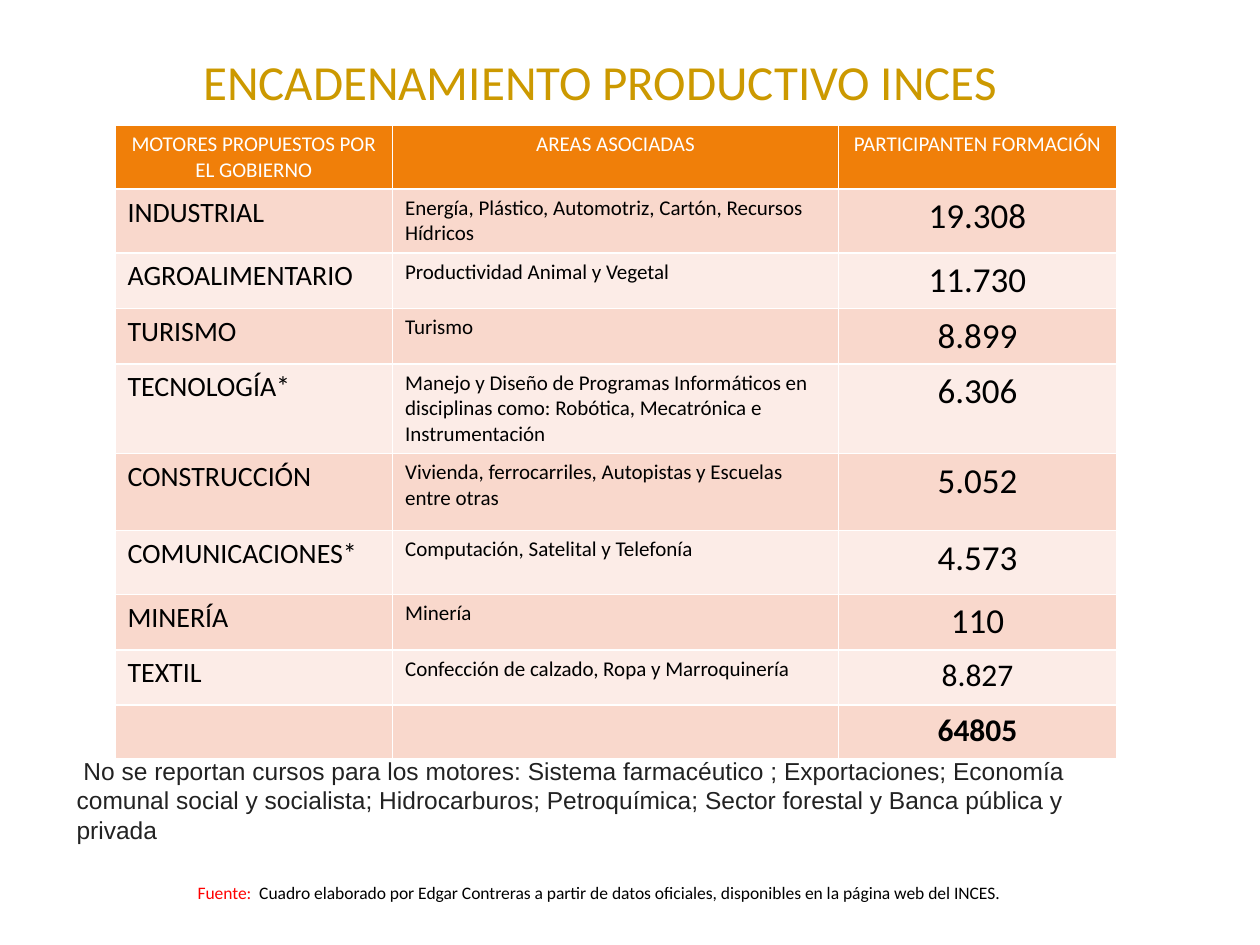
from dataclasses import dataclass

from lxml import etree
from pptx import Presentation
from pptx.dml.color import RGBColor
from pptx.enum.text import MSO_AUTO_SIZE, PP_ALIGN
from pptx.oxml.ns import qn
from pptx.slide import Slide
from pptx.util import Pt

LEFT, CENTER = PP_ALIGN.LEFT, PP_ALIGN.CENTER
GROW = MSO_AUTO_SIZE.SHAPE_TO_FIT_TEXT

COLORS = {
    "white": "FFFFFF", "black": "000000", "orange": "F07F09",
    "dark": "F9D8CC", "light": "FCECE7", "gold": "CC9900",
    "gray": "222222", "red": "FF0000",
}
HEAD = ["MOTORES PROPUESTOS POR EL GOBIERNO", "AREAS ASOCIADAS",
        "PARTICIPANTEN FORMACIÓN"]
BODY = [
    ("INDUSTRIAL", "Energía, Plástico, Automotriz, Cartón, Recursos Hídricos",
     "19.308"),
    ("AGROALIMENTARIO", "Productividad Animal y Vegetal", "11.730"),
    ("TURISMO", "Turismo", "8.899"),
    ("TECNOLOGÍA*", "Manejo y Diseño de Programas Informáticos en disciplinas "
     "como: Robótica, Mecatrónica e Instrumentación", "6.306"),
    ("CONSTRUCCIÓN",
     "Vivienda, ferrocarriles, Autopistas y Escuelas entre otras", "5.052"),
    ("COMUNICACIONES*", "Computación, Satelital y Telefonía", "4.573"),
    ("MINERÍA", "Minería", "110"),
    ("TEXTIL", "Confección de calzado, Ropa y Marroquinería", "8.827"),
    ("", "", "64805"),
]
WIDTHS = [158.6, 255, 158.6]
HEIGHTS = [34.5, 34.5, 30, 30, 49, 44, 36.5, 30, 31.5, 31]
SIZES = [16, 12, 20]
NOTE = (" No se reportan cursos para los motores: Sistema farmacéutico ; "
        "Exportaciones; Economía comunal social y socialista; Hidrocarburos; "
        "Petroquímica; Sector forestal y Banca pública y privada")
SOURCE = ("Cuadro elaborado por Edgar Contreras a partir de datos oficiales, "
          "disponibles en la página web del INCES.")


@dataclass
class Page:
    """Holds the style and the current slide, and draws its elements."""

    slide: Slide
    font: str = "Calibri"
    edge: float = 1

    def style(self, run, size, color, font=None, bold=False):
        run.font.name = font or self.font
        run.font.size = Pt(size)
        run.font.bold = bold
        run.font.color.rgb = RGBColor.from_string(COLORS[color])

    def text(self, box, parts, size, font=None, align=LEFT, wrap=True):
        shape = self.slide.shapes.add_textbox(*map(Pt, box))
        frame = shape.text_frame
        frame.word_wrap = wrap
        frame.auto_size = GROW
        para = frame.paragraphs[0]
        para.alignment = align
        for words, color in parts:
            run = para.add_run()
            run.text = words
            self.style(run, size, color, font)

    def border(self, cell):
        props = cell._tc.get_or_add_tcPr()
        for side in "LRTB":
            line = etree.SubElement(props, qn(f"a:ln{side}"),
                                    w=str(Pt(self.edge)))
            fill = etree.SubElement(line, qn("a:solidFill"))
            etree.SubElement(fill, qn("a:srgbClr"), val=COLORS["white"])

    def cell(self, cell, words, size, color, fill, align, bold):
        self.border(cell)
        cell.fill.solid()
        cell.fill.fore_color.rgb = RGBColor.from_string(COLORS[fill])
        cell.text_frame.text = words
        para = cell.text_frame.paragraphs[0]
        para.alignment = align
        for run in para.runs:
            self.style(run, size, color, bold=bold)

    def table(self, left, top):
        rows = [HEAD, *BODY]
        frame = self.slide.shapes.add_table(
            len(rows), len(WIDTHS), Pt(left), Pt(top),
            Pt(sum(WIDTHS)), Pt(sum(HEIGHTS)))
        grid = frame.table
        for col, width in zip(grid.columns, WIDTHS):
            col.width = Pt(width)
        for r, (row, height) in enumerate(zip(rows, HEIGHTS)):
            grid.rows[r].height = Pt(height)
            head, total = r == 0, r == len(rows) - 1
            fill = "orange" if head else "dark" if r % 2 else "light"
            color = "white" if head else "black"
            for c, words in enumerate(row):
                size = 12 if head else SIZES[c]
                if c == 2 and r >= len(rows) - 2:
                    size = 18
                align = CENTER if head or c == 2 else LEFT
                self.cell(grid.cell(r, c), words, size, color, fill,
                          align, total)


def main():
    deck = Presentation()
    deck.slide_width, deck.slide_height = Pt(720), Pt(540)
    page = Page(deck.slides.add_slide(deck.slide_layouts[6]))
    page.table(65.7, 71.6)
    page.text((42.5, 26, 607, 41),
              [("ENCADENAMIENTO PRODUCTIVO INCES ", "gold")], 28, align=CENTER)
    page.text((36.7, 428.5, 612, 58.5), [(NOTE, "gray")], 14, font="Arial")
    page.text((105.8, 500.4, 481, 19.4),
              [("Fuente:  ", "red"), (SOURCE, "black")], 10, wrap=False)
    deck.save("out.pptx")


if __name__ == "__main__":
    main()
